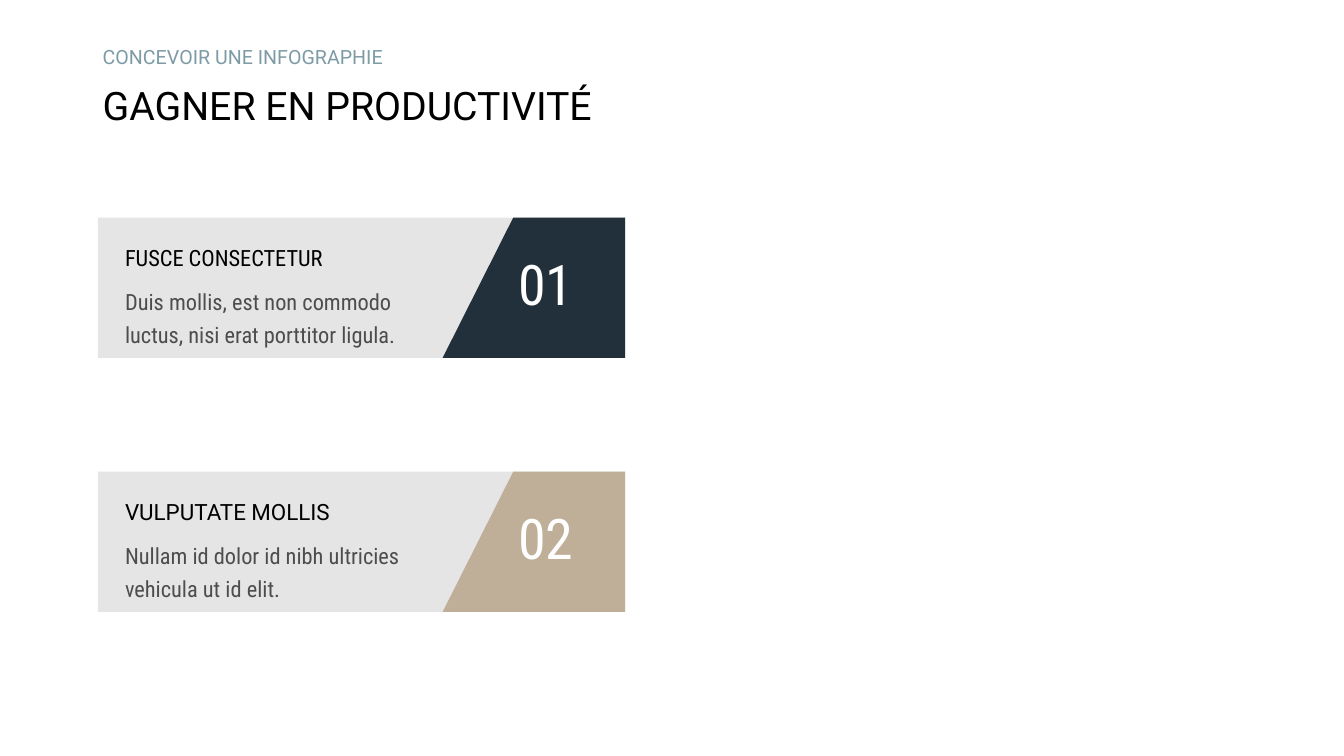
from pptx import Presentation
from pptx.dml.color import RGBColor
from pptx.enum.shapes import MSO_SHAPE
from pptx.enum.text import MSO_ANCHOR
from pptx.util import Inches, Pt

BLACK = RGBColor(0x00, 0x00, 0x00)
WHITE = RGBColor(0xFF, 0xFF, 0xFF)
STEEL = RGBColor(0x7C, 0x9B, 0xA6)
LIGHT = RGBColor(0xE5, 0xE5, 0xE5)
GRAY = RGBColor(0x4D, 0x4D, 0x4D)
NAVY = RGBColor(0x22, 0x30, 0x3C)
SAND = RGBColor(0xBF, 0xAF, 0x99)

SANS = "Roboto"
NARROW = "Roboto Condensed"

TITLE = "GAGNER EN PRODUCTIVITÉ"
TOPIC = "CONCEVOIR UNE INFOGRAPHIE"
CARDS = [
    ("01", "FUSCE CONSECTETUR", SANS and NARROW,
     "Duis mollis, est non commodo luctus, nisi erat porttitor ligula.", NAVY),
    ("02", "VULPUTATE MOLLIS", SANS,
     "Nullam id dolor id nibh ultricies vehicula ut id elit.", SAND),
]
CARDS[0] = CARDS[0][:2] + (NARROW,) + CARDS[0][3:]

LEFT, TOP, WIDTH, HEIGHT = 0.97, 2.16, 5.23, 1.39
PITCH = 2.52
RIGHT = LEFT + WIDTH
SLANT_TOP, SLANT_LOW = 5.09, 4.39


def add_text(slide, text, box, size, font, color, lines,
             before=0, inset=0, anchor=MSO_ANCHOR.MIDDLE):
    frame = slide.shapes.add_textbox(*map(Inches, box)).text_frame
    frame.word_wrap = True
    frame.vertical_anchor = anchor
    frame.margin_left = frame.margin_right = Inches(inset)
    frame.margin_top = frame.margin_bottom = Inches(inset / 2)
    frame.text = text
    para = frame.paragraphs[0]
    para.line_spacing = lines
    para.space_before = Pt(before)
    style = para.runs[0].font
    style.size, style.name = Pt(size), font
    style.color.rgb = color


def paint(shape, color):
    shape.shadow.inherit = False
    shape.fill.solid()
    shape.fill.fore_color.rgb = color
    shape.line.fill.background()


def add_card(slide, top, number, head, font, body, color):
    base = slide.shapes.add_shape(
        MSO_SHAPE.RECTANGLE, *map(Inches, (LEFT, top, WIDTH, HEIGHT)))
    paint(base, LIGHT)

    low = top + HEIGHT
    corners = [(SLANT_TOP, top), (SLANT_LOW, low), (RIGHT, low), (RIGHT, top)]
    points = [(Inches(x), Inches(y)) for x, y in corners]
    outline = slide.shapes.build_freeform(*points[0])
    outline.add_line_segments(points[1:], close=True)
    paint(outline.convert_to_shape(), color)

    add_text(slide, number, (5.14, top + 0.4, 0.62, 0.58),
             40, NARROW, WHITE, 0.9)
    add_text(slide, head, (1.24, top + 0.21, 3.05, 0.35),
             16, font, BLACK, 1.1, before=30)
    add_text(slide, body, (1.24, top + 0.65, 3.05, 0.58),
             16, NARROW, GRAY, 1.2, before=10, anchor=MSO_ANCHOR.TOP)


def main():
    deck = Presentation()
    deck.slide_width, deck.slide_height = Inches(13.33), Inches(7.5)
    slide = deck.slides.add_slide(deck.slide_layouts[6])
    add_text(slide, TITLE, (0.92, 0.78, 11.5, 0.57),
             28, SANS, BLACK, 0.9, inset=0.1)
    add_text(slide, TOPIC, (0.92, 0.4, 11.5, 0.36),
             14, SANS, STEEL, 0.9, before=10, inset=0.1)
    for row, card in enumerate(CARDS):
        add_card(slide, TOP + row * PITCH, *card)
    deck.save("out.pptx")


if __name__ == "__main__":
    main()
